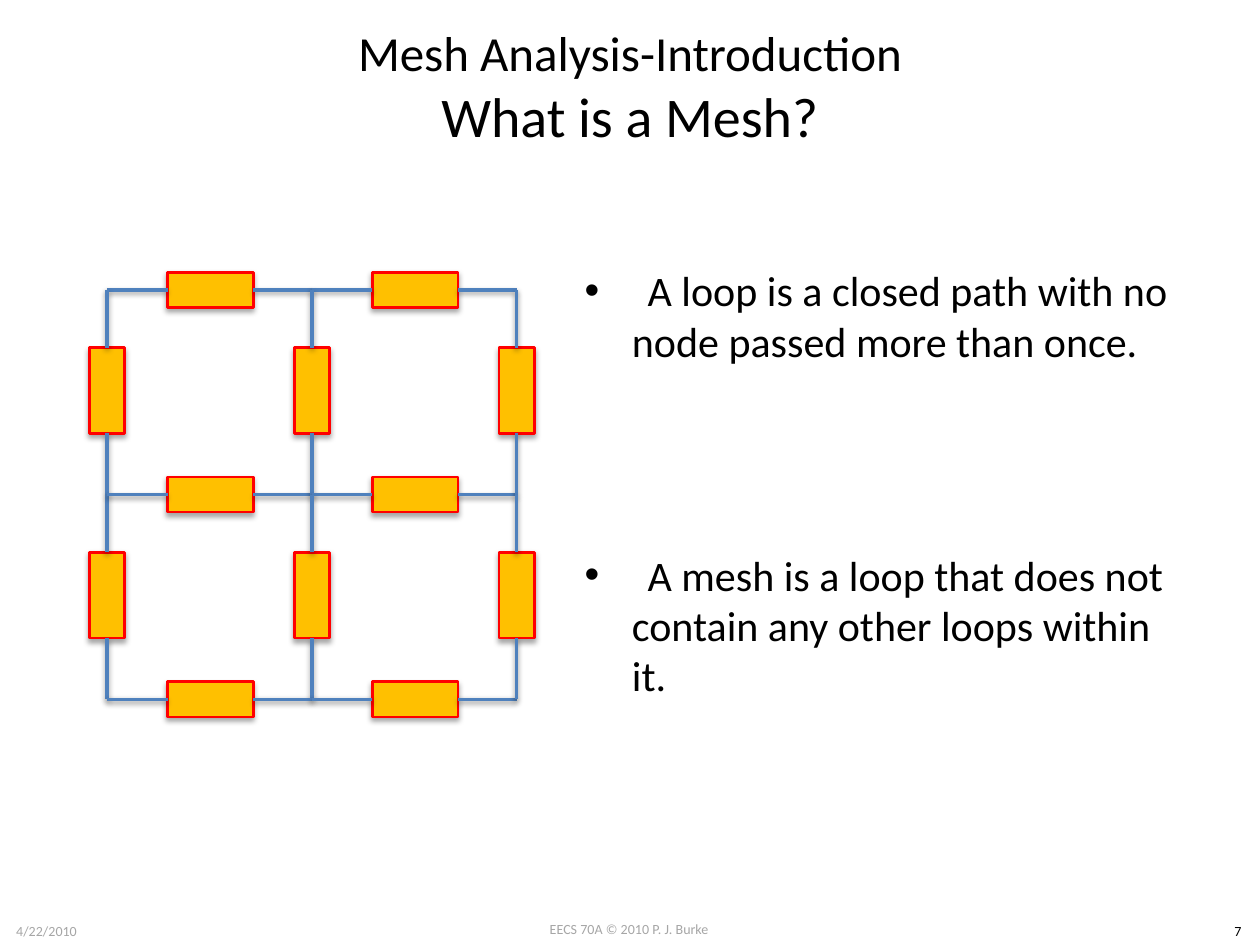
import pptx
import pptx.dml.color
import pptx.enum.shapes
import pptx.enum.text
import pptx.oxml
import pptx.oxml.ns
import pptx.util
from dataclasses import dataclass

Inches, Pt = pptx.util.Inches, pptx.util.Pt
RGB = pptx.dml.color.RGBColor.from_string
ALIGN = pptx.enum.text.PP_ALIGN
ANCHOR = pptx.enum.text.MSO_ANCHOR
AUTO_SIZE = pptx.enum.text.MSO_AUTO_SIZE

HEADING = [("Mesh Analysis-Introduction", 28), ("What is a Mesh?", 32)]
DEFINITIONS = [
    "\tA loop is a closed path with no node passed more than once.",
    "\tA mesh is a loop that does not contain any other loops within it.",
]


@dataclass(frozen=True)
class Theme:
    font: str = "Calibri"
    ink: str = "000000"
    muted: str = "A6A6A6"
    resistor: str = "FFC000"
    outline: str = "FF0000"
    wire: str = "4F81BD"
    body_size: int = 24
    footer_size: int = 8


THEME = Theme()
FOOTERS = [  # text, left, top, width, colour
    ("EECS 70A © 2010 P. J. Burke", 3.83, 7.26, 2.33, THEME.muted),
    ("4/22/2010", 0, 7.27, 0.74, THEME.muted),
    ("7", 9.65, 7.27, 0.35, THEME.ink),
]

# Circuit grid: nodes joined by a wire, a resistor and a wire
MESHES = 2
ORIGIN_X, ORIGIN_Y, PITCH = 0.85, 2.3, 1.625
LENGTH, THICKNESS = 0.68, 0.28
LEAD_ACROSS, LEAD_DOWN = 0.48, 0.46


def place(shape, left, top, width, height):
    shape.left, shape.top = Inches(left), Inches(top)
    shape.width, shape.height = Inches(width), Inches(height)


def style(run, size, color=THEME.ink):
    run.font.name = THEME.font
    run.font.size = Pt(size)
    run.font.color.rgb = RGB(color)


def cast_shadow(shape, opacity, distance):
    """Replace the theme's effects with a soft shadow straight below."""
    shape._element.spPr.append(pptx.oxml.parse_xml(
        f'<a:effectLst {pptx.oxml.ns.nsdecls("a")}>'
        f'<a:outerShdw blurRad="{Pt(3.1)}" dist="{Pt(distance)}" dir="5400000" rotWithShape="0">'
        f'<a:srgbClr val="000000"><a:alpha val="{opacity * 1000}"/></a:srgbClr>'
        '</a:outerShdw></a:effectLst>'))


def add_wire(circuit, start, end):
    wire = circuit.shapes.add_connector(
        pptx.enum.shapes.MSO_CONNECTOR.STRAIGHT, *map(Inches, start + end))
    wire.line.color.rgb = RGB(THEME.wire)
    wire.line.width = Pt(2)
    cast_shadow(wire, 38, 1.6)


def add_branch(circuit, x, y, down):
    """Draw wire, resistor and wire from node (x, y) to the next node."""
    lead = LEAD_DOWN if down else LEAD_ACROSS

    def along(distance):
        return (x, y + distance) if down else (x + distance, y)

    center_x, center_y = along(lead + LENGTH / 2)
    resistor = circuit.shapes.add_shape(
        pptx.enum.shapes.MSO_SHAPE.RECTANGLE,
        Inches(center_x - LENGTH / 2), Inches(center_y - THICKNESS / 2),
        Inches(LENGTH), Inches(THICKNESS))
    resistor.rotation = 90 if down else 180
    resistor.fill.solid()
    resistor.fill.fore_color.rgb = RGB(THEME.resistor)
    resistor.line.color.rgb = RGB(THEME.outline)
    resistor.line.width = Pt(1.5)
    cast_shadow(resistor, 35, 1.8)

    add_wire(circuit, along(0), along(lead))
    add_wire(circuit, along(lead + LENGTH), along(PITCH))


def add_circuit(slide):
    circuit = slide.shapes.add_group_shape()
    for line in range(MESHES + 1):
        for step in range(MESHES):
            add_branch(circuit, ORIGIN_X + step * PITCH, ORIGIN_Y + line * PITCH, down=False)
            add_branch(circuit, ORIGIN_X + line * PITCH, ORIGIN_Y + step * PITCH, down=True)


def add_footer(slide, text, left, top, width, color):
    footer = slide.shapes.add_textbox(*map(Inches, (left, top, width, 0.24)))
    frame = footer.text_frame
    frame.word_wrap = False
    frame.auto_size = AUTO_SIZE.SHAPE_TO_FIT_TEXT
    frame.text = text
    frame.paragraphs[0].alignment = ALIGN.CENTER
    style(frame.paragraphs[0].runs[0], THEME.footer_size, color)


def fill_heading(title):
    place(title, 0.5, 0.13, 9, 1.25)
    frame = title.text_frame
    frame.auto_size = AUTO_SIZE.NONE
    frame.vertical_anchor = ANCHOR.TOP
    frame.text = "\v".join(text for text, _ in HEADING)
    frame.paragraphs[0].alignment = ALIGN.CENTER
    for run, (_, size) in zip(frame.paragraphs[0].runs, HEADING):
        style(run, size)


def fill_definitions(body):
    place(body, 4.54, 2.05, 4.96, 4.66)
    frame = body.text_frame
    frame.auto_size = AUTO_SIZE.NONE
    frame.text = "\n".join(DEFINITIONS)
    for paragraph in frame.paragraphs:
        style(paragraph.runs[0], THEME.body_size)
    frame.paragraphs[1].space_before = Pt(105)


def main():
    deck = pptx.Presentation()
    deck.slide_width, deck.slide_height = Inches(10), Inches(7.5)
    slide = deck.slides.add_slide(deck.slide_layouts[1])
    for footer in FOOTERS:
        add_footer(slide, *footer)
    fill_heading(slide.shapes.title)
    fill_definitions(slide.placeholders[1])
    add_circuit(slide)
    deck.save("out.pptx")


if __name__ == "__main__":
    main()
